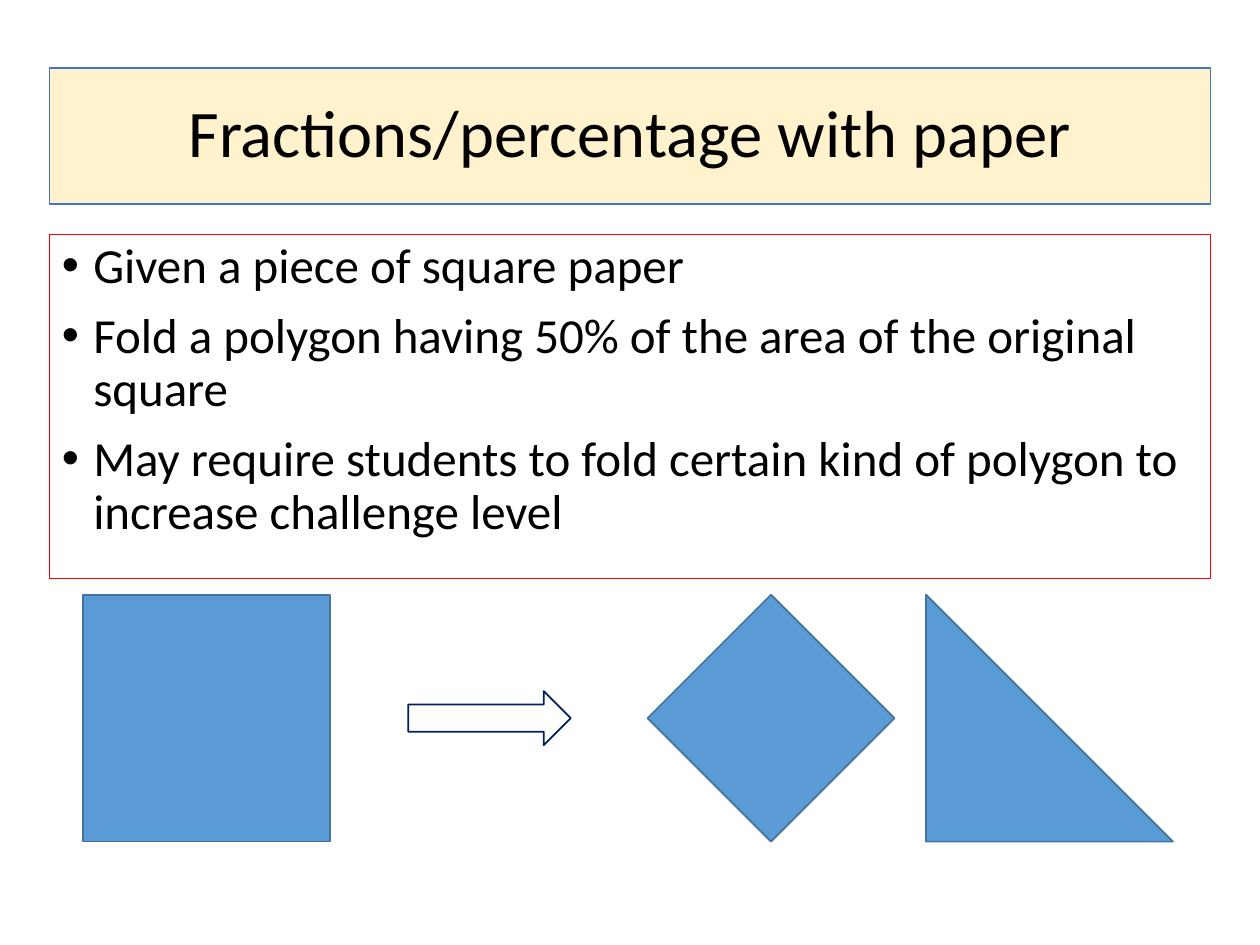
from pptx import Presentation
from pptx.dml.color import RGBColor
from pptx.enum.shapes import MSO_SHAPE
from pptx.enum.text import MSO_ANCHOR, MSO_AUTO_SIZE, PP_ALIGN
from pptx.oxml.xmlchemy import OxmlElement
from pptx.util import Inches, Pt

# Content
TITLE = "Fractions/percentage with paper"
POINTS = [
    "Given a piece of square paper",
    "Fold a polygon having 50% of the area of the original square",
    "May require students to fold certain kind of polygon to increase challenge level",
]
PAPERS = [  # shape, left
    (MSO_SHAPE.RECTANGLE, 0.66),
    (MSO_SHAPE.DIAMOND, 5.14),
    (MSO_SHAPE.RIGHT_TRIANGLE, 7.35),
]

THEME = dict(
    font="Calibri", text="000000", title_size=38, body_size=28,
    title_fill="FFF2CC", title_line="4472C4", body_line="FF0000",
    paper="5B9BD5", paper_line="43739E", arrow="FFFFFF", arrow_line="002060",
)

# Layout in inches
MARGIN, BOX_W = 0.39, 9.22
PAPER_TOP, PAPER_SIZE = 4.72, 1.96
ARROW_LEFT, ARROW_W, ARROW_H = 3.24, 1.29, 0.43


def place(sp, left, top, width, height):
    sp.left, sp.top = Inches(left), Inches(top)
    sp.width, sp.height = Inches(width), Inches(height)


def style(sp, line, fill=None, weight=1):
    if fill:
        sp.fill.solid()
        sp.fill.fore_color.rgb = RGBColor.from_string(fill)
    sp.line.color.rgb = RGBColor.from_string(line)
    sp.line.width = Pt(weight)


def add_bullet(p, indent=0.25):
    pPr = p._p.get_or_add_pPr()
    pPr.set("marL", str(Inches(indent)))
    pPr.set("indent", str(-Inches(indent)))
    for tag, attr, value in (("a:buFont", "typeface", "Arial"), ("a:buChar", "char", "•")):
        el = OxmlElement(tag)
        el.set(attr, value)
        pPr.append(el)


def write(tf, lines, size, align=PP_ALIGN.LEFT, anchor=MSO_ANCHOR.TOP, bullet=False, gap=10):
    tf.word_wrap = True
    tf.auto_size = MSO_AUTO_SIZE.NONE
    tf.vertical_anchor = anchor
    for i, text in enumerate(lines):
        p = tf.paragraphs[0] if i == 0 else tf.add_paragraph()
        p.alignment = align
        p.line_spacing = 0.9
        p.space_before = Pt(gap if i else 0)
        if bullet:
            add_bullet(p)
        r = p.add_run()
        r.text = text
        r.font.size = Pt(size)
        r.font.name = THEME["font"]
        r.font.color.rgb = RGBColor.from_string(THEME["text"])


def add_figure(s, kind, box, fill, line):
    sp = s.shapes.add_shape(kind, *(Inches(v) for v in box))
    sp.shadow.inherit = False
    style(sp, line, fill)


prs = Presentation()
prs.slide_width, prs.slide_height = Inches(10), Inches(7.5)
s = prs.slides.add_slide(prs.slide_layouts[1])

# Title and list
title, body = s.shapes.title, s.placeholders[1]
place(title, MARGIN, 0.54, BOX_W, 1.08)
style(title, THEME["title_line"], THEME["title_fill"], 0.75)
write(title.text_frame, [TITLE], THEME["title_size"],
      align=PP_ALIGN.CENTER, anchor=MSO_ANCHOR.MIDDLE)

place(body, MARGIN, 1.86, BOX_W, 2.73)
style(body, THEME["body_line"], weight=0.75)
write(body.text_frame, POINTS, THEME["body_size"], bullet=True)

# Square paper and the polygons folded from it
for kind, left in PAPERS:
    add_figure(s, kind, (left, PAPER_TOP, PAPER_SIZE, PAPER_SIZE),
               THEME["paper"], THEME["paper_line"])

# Arrow, centred on the height of the papers
arrow_top = PAPER_TOP + (PAPER_SIZE - ARROW_H) / 2
add_figure(s, MSO_SHAPE.RIGHT_ARROW, (ARROW_LEFT, arrow_top, ARROW_W, ARROW_H),
           THEME["arrow"], THEME["arrow_line"])

prs.save("out.pptx")
